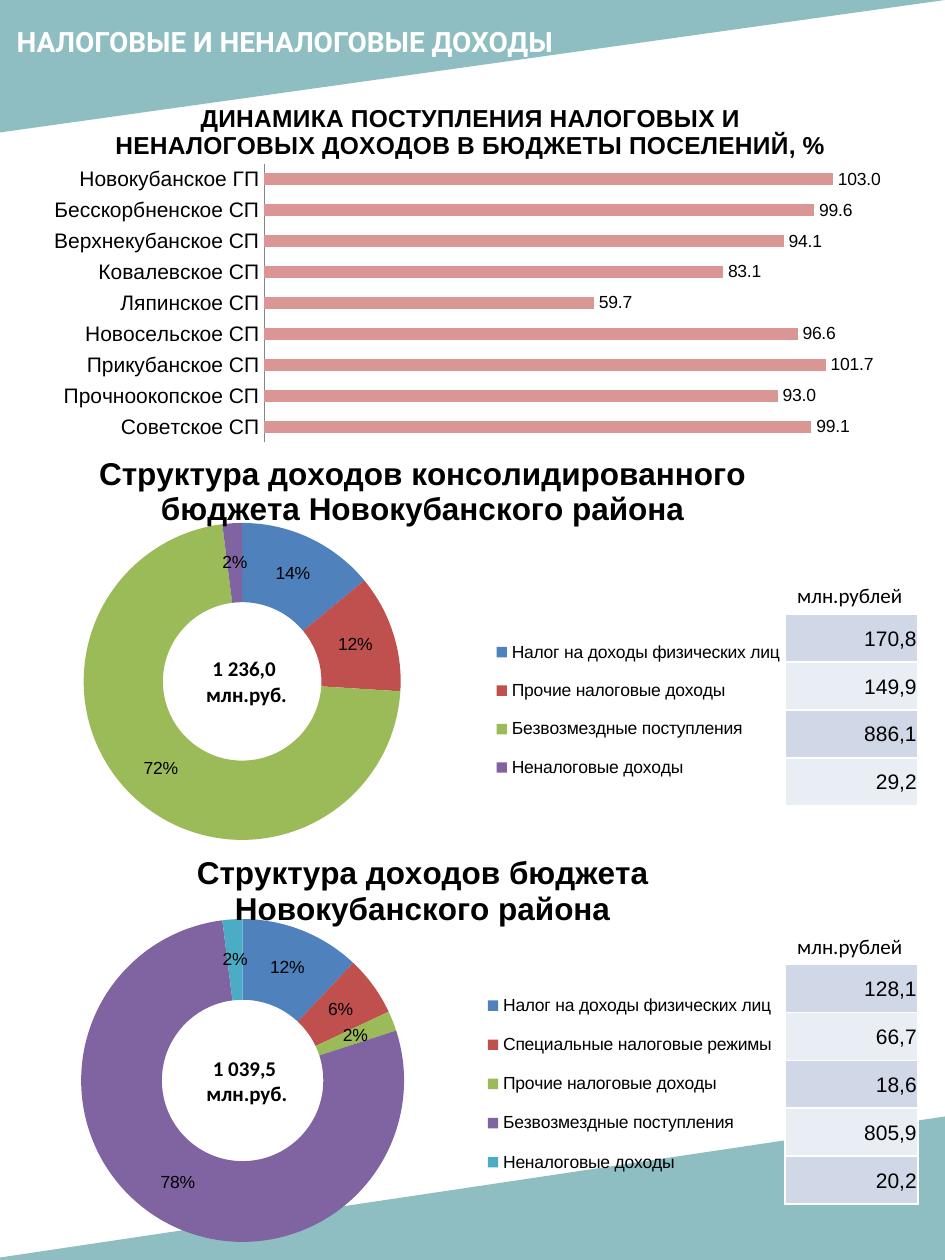
from collections import namedtuple

from lxml import etree
from pptx import Presentation
from pptx.chart.data import CategoryChartData
from pptx.dml.color import RGBColor
from pptx.enum.chart import XL_CHART_TYPE, XL_LABEL_POSITION, XL_LEGEND_POSITION, XL_TICK_MARK
from pptx.enum.shapes import MSO_SHAPE
from pptx.enum.text import MSO_ANCHOR, PP_ALIGN
from pptx.oxml import parse_xml
from pptx.oxml.ns import nsdecls, qn
from pptx.util import Cm, Pt

COLORS = {
    "band": "519AA0", "white": "FFFFFF", "black": "000000", "axis": "868686",
    "bar": "D99694", "row_dark": "D0D8E8", "row_light": "E9EDF4",
}
SLICES = ["4F81BD", "C0504D", "9BBB59", "8064A2", "4BACC6"]
Box = namedtuple("Box", "left top width height")

SETTLEMENTS = {
    "Новокубанское ГП": 103.0, "Бесскорбненское СП": 99.6, "Верхнекубанское СП": 94.1,
    "Ковалевское СП": 83.1, "Ляпинское СП": 59.7, "Новосельское СП": 96.6,
    "Прикубанское СП": 101.7, "Прочноокопское СП": 93.0, "Советское СП": 99.1,
}
CONSOLIDATED = [
    ("Налог на доходы физических лиц", 14, "170,8"),
    ("Прочие налоговые доходы", 12, "149,9"),
    ("Безвозмездные поступления", 72, "886,1"),
    ("Неналоговые доходы", 2, "29,2"),
]
DISTRICT = [
    ("Налог на доходы физических лиц", 12, "128,1"),
    ("Специальные налоговые режимы", 6, "66,7"),
    ("Прочие налоговые доходы", 2, "18,6"),
    ("Безвозмездные поступления", 78, "805,9"),
    ("Неналоговые доходы", 2, "20,2"),
]


def rgb(value):
    return RGBColor.from_string(value)


def lengths(box):
    return [Cm(value) for value in box]


def format_text(frame, size, font, color="black", bold=False, align=None):
    for para in frame.paragraphs:
        para.alignment = align
        for span in para.runs:
            span.font.size = Pt(size)
            span.font.name = font
            span.font.bold = bold
            span.font.color.rgb = rgb(COLORS[color])


def add_band(page, box, flip):
    band = page.shapes.add_shape(MSO_SHAPE.RIGHT_TRIANGLE, *lengths(box))
    band.rotation = 180
    band.element.spPr.find(qn("a:xfrm")).set(flip, "1")
    band.shadow.inherit = False
    band.line.fill.background()
    band.fill.solid()
    band.fill.fore_color.rgb = rgb(COLORS["band"])
    color = band.element.spPr.find(qn("a:solidFill"))[0]
    etree.SubElement(color, qn("a:alpha"), val="64000")
    page.shapes.title.element.addprevious(band.element)


def add_heading(page, box):
    title = page.shapes.title
    title.left, title.top, title.width, title.height = lengths(box)
    frame = title.text_frame
    frame.text = "НАЛОГОВЫЕ И НЕНАЛОГОВЫЕ ДОХОДЫ"
    frame.vertical_anchor = MSO_ANCHOR.TOP
    format_text(frame, 16, "Roboto", "white", True, PP_ALIGN.LEFT)


def add_text(page, box, text, bold, align, wrap):
    frame = page.shapes.add_textbox(*lengths(box)).text_frame
    frame.word_wrap = wrap
    frame.text = text
    format_text(frame, 12, "Calibri", "black", bold, align)


def manual_layout(box, inner=False):
    target = '<c:layoutTarget val="inner"/>' if inner else ""
    sizes = "".join(f'<c:{tag} val="{value:.3f}"/>' for tag, value in zip("xywh", box))
    return parse_xml(
        f'<c:layout {nsdecls("c")}><c:manualLayout>{target}'
        f'<c:xMode val="edge"/><c:yMode val="edge"/>{sizes}</c:manualLayout></c:layout>')


def drop_layout(element):
    for layout in element.findall(qn("c:layout")):
        element.remove(layout)


def add_chart(page, box, kind, names, values, title, title_size, plot_box):
    data = CategoryChartData()
    data.categories = names
    data.add_series("Доходы", values)
    chart = page.shapes.add_chart(kind, *lengths(box), data).chart
    chart.font.size = Pt(10)
    chart.font.name = "Arial"
    chart.font.color.rgb = rgb(COLORS["black"])
    chart.has_title = True
    chart.chart_title.text_frame.text = title
    format_text(chart.chart_title.text_frame, title_size, "Arial", bold=True)
    chart_element = chart.element.find(qn("c:chart"))
    chart_element.addnext(parse_xml(
        f'<c:spPr {nsdecls("c", "a")}><a:noFill/><a:ln><a:noFill/></a:ln></c:spPr>'))
    area = chart_element.find(qn("c:plotArea"))
    drop_layout(area)
    area.insert(0, manual_layout(plot_box, inner=True))
    chart.plots[0].has_data_labels = True
    return chart


def add_dynamics(page, box):
    chart = add_chart(
        page, box, XL_CHART_TYPE.BAR_CLUSTERED, list(SETTLEMENTS), list(SETTLEMENTS.values()),
        "ДИНАМИКА ПОСТУПЛЕНИЯ НАЛОГОВЫХ И НЕНАЛОГОВЫХ ДОХОДОВ В БЮДЖЕТЫ ПОСЕЛЕНИЙ, %", 14,
        Box(0.281, 0.215, 0.704, 0.745))
    chart.has_legend = False
    plot = chart.plots[0]
    plot.vary_by_categories = False
    plot.gap_width = 150
    plot.overlap = -25
    fill = plot.series[0].format.fill
    fill.solid()
    fill.fore_color.rgb = rgb(COLORS["bar"])
    labels = plot.data_labels
    labels.show_value = True
    labels.number_format = "0.0"
    labels.number_format_is_linked = False
    labels.position = XL_LABEL_POSITION.OUTSIDE_END
    names = chart.category_axis
    names.reverse_order = True
    names.major_tick_mark = XL_TICK_MARK.NONE
    names.tick_labels.font.size = Pt(12)
    names.format.line.color.rgb = rgb(COLORS["axis"])
    scale = chart.value_axis
    scale.minimum_scale = 0
    scale.maximum_scale = 120
    scale.has_major_gridlines = False
    scale.visible = False


def add_amounts(page, box, amounts):
    table = page.shapes.add_table(len(amounts), 1, *lengths(box)).table
    table.first_row = False
    table.horz_banding = False
    for index, amount in enumerate(amounts):
        cell = table.cell(index, 0)
        cell.text = amount
        cell.vertical_anchor = MSO_ANCHOR.MIDDLE
        cell.margin_left = cell.margin_right = cell.margin_top = Cm(0.03)
        cell.margin_bottom = 0
        format_text(cell.text_frame, 12, "Arial", align=PP_ALIGN.RIGHT)
        cell.fill.solid()
        cell.fill.fore_color.rgb = rgb(COLORS["row_light" if index % 2 else "row_dark"])
        properties = cell.text_frame._txBody.getparent().find(qn("a:tcPr"))
        for place, side in enumerate(("lnL", "lnR", "lnT", "lnB")):
            properties.insert(place, parse_xml(
                f'<a:{side} {nsdecls("a")} w="12700"><a:solidFill>'
                f'<a:srgbClr val="{COLORS["white"]}"/></a:solidFill></a:{side}>'))


def add_structure(page, box, title, rows, total, plot_box, legend_left, legend_middle):
    names, shares, amounts = zip(*rows)
    table_height = 0.965 * len(rows)
    table_left = box.left + 15.82
    table_top = box.top + legend_middle * box.height - table_height / 2
    add_text(page, Box(table_left, table_top - 0.76, 2.62, 0.76), "млн.рублей", False, None, False)
    add_amounts(page, Box(table_left, table_top, 2.69, table_height), amounts)

    chart = add_chart(page, box, XL_CHART_TYPE.DOUGHNUT, names, shares, title, 18, plot_box)
    plot = chart.plots[0]
    plot.vary_by_categories = True
    for index, color in enumerate(SLICES[:len(rows)]):
        fill = plot.series[0].points[index].format.fill
        fill.solid()
        fill.fore_color.rgb = rgb(color)
    labels = plot.data_labels
    labels.show_value = False
    labels.show_percentage = True
    labels.number_format = "0%"
    labels.number_format_is_linked = False
    chart.has_legend = True
    chart.legend.position = XL_LEGEND_POSITION.RIGHT
    chart.legend.include_in_layout = False
    legend = chart.element.find(qn("c:chart")).find(qn("c:legend"))
    drop_layout(legend)
    legend_height = 0.87 * len(rows) / box.height
    legend.find(qn("c:legendPos")).addnext(manual_layout(
        Box(legend_left, legend_middle - legend_height / 2, 0.35, legend_height)))

    center_x = box.left + (plot_box.left + plot_box.width / 2) * box.width
    center_y = box.top + (plot_box.top + plot_box.height / 2) * box.height
    add_text(page, Box(center_x - 1.1, center_y - 0.64, 2.28, 1.28),
             f"{total}\n млн.руб.", True, PP_ALIGN.CENTER, True)


def main():
    deck = Presentation()
    deck.slide_width, deck.slide_height = Cm(19.05), Cm(25.4)
    page = deck.slides.add_slide(deck.slide_layouts[5])
    add_band(page, Box(0, 0, 19.05, 2.67), "flipH")
    add_band(page, Box(-0.33, 22.5, 19.43, 2.9), "flipV")
    add_heading(page, Box(0.08, 0.36, 11.46, 1.63))
    add_dynamics(page, Box(0, 1.68, 18.97, 7.54))
    add_structure(page, Box(0, 8.71, 17.04, 8.36),
                  "Структура доходов консолидированного бюджета Новокубанского района",
                  CONSOLIDATED, "1 236,0", Box(0.099, 0.219, 0.375, 0.765), 0.58, 0.67)
    add_structure(page, Box(0, 16.76, 17.04, 8.64),
                  "Структура доходов бюджета Новокубанского района",
                  DISTRICT, "1 039,5", Box(0.096, 0.204, 0.382, 0.755), 0.57, 0.59)
    deck.save("out.pptx")


if __name__ == "__main__":
    main()
